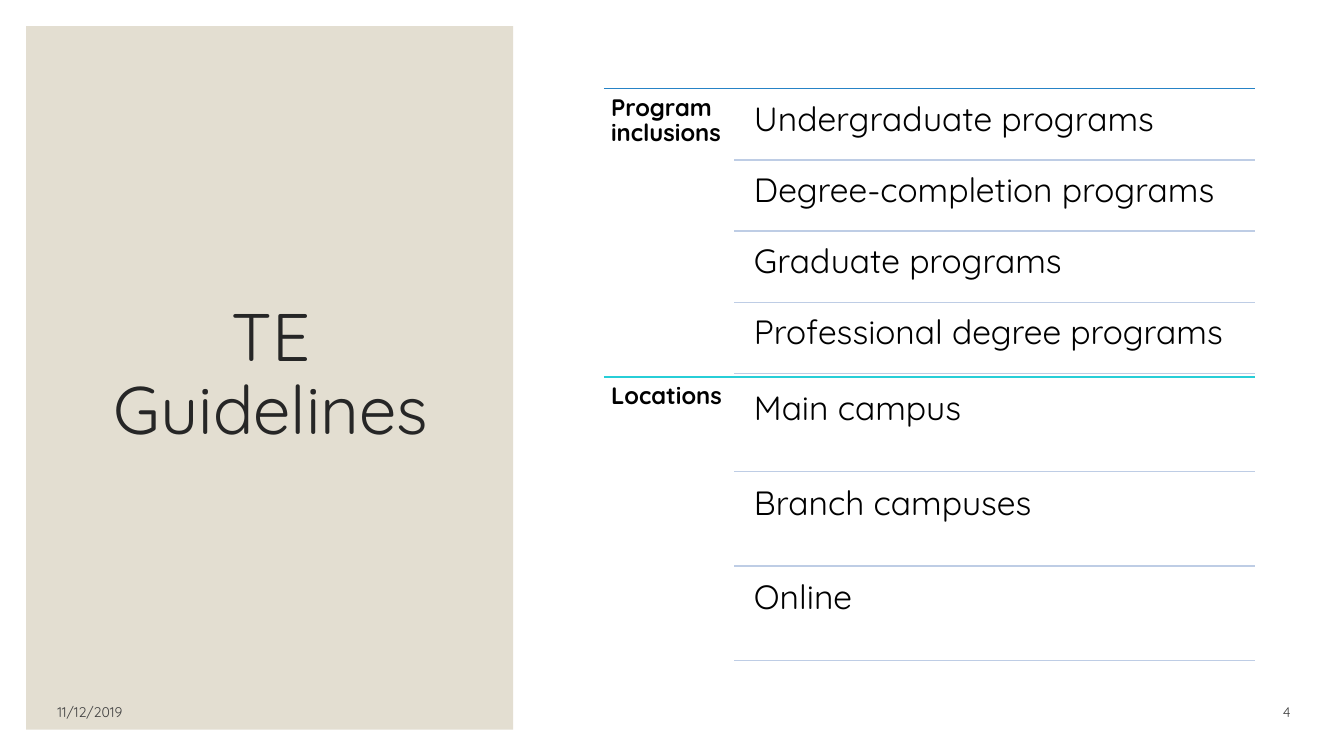
from dataclasses import dataclass

from lxml import etree
from pptx import Presentation
from pptx.dml.color import RGBColor
from pptx.enum import shapes, text
from pptx.oxml import ns
from pptx.util import Inches, Pt

FONT = "Quicksand"
COLORS = {
    "background": "FFFFFF", "panel": "E3DED1", "title": "262626",
    "footer": "404040", "body": "000000", "divider": "BECDE5",
    "programs": "2683C6", "locations": "27CED7",
}
LEFT, DIVIDER_LEFT, ITEM_LEFT, RIGHT = 5.99, 7.28, 7.38, 12.45
TOP, SECTION_HEIGHT = 0.88, 2.86
GAP_RATIO = 0.05  # gap before each item, as a share of item height


@dataclass
class Section:
    heading: str
    color: str
    items: list[str]


@dataclass
class Style:
    size: float
    color: str = "body"
    bold: bool = False
    align: text.PP_ALIGN = text.PP_ALIGN.LEFT
    anchor: text.MSO_ANCHOR = text.MSO_ANCHOR.TOP
    spacing: float = 0.9


SECTIONS = [
    Section("Program inclusions", "programs", [
        "Undergraduate programs", "Degree-completion programs",
        "Graduate programs", "Professional degree programs"]),
    Section("Locations", "locations", ["Main campus", "Branch campuses", "Online"]),
]
TITLE = Style(48, "title", align=text.PP_ALIGN.CENTER, anchor=text.MSO_ANCHOR.MIDDLE)
HEADING = Style(17, bold=True)
ITEM = Style(24)
DATE = Style(10, "footer", anchor=text.MSO_ANCHOR.BOTTOM, spacing=1)
NUMBER = Style(10, "footer", align=text.PP_ALIGN.RIGHT,
               anchor=text.MSO_ANCHOR.BOTTOM, spacing=1)


def rgb(name: str) -> RGBColor:
    return RGBColor.from_string(COLORS[name])


def write(sp, words: str, style: Style, inset: float = 0.1, inset_y: float = 0.05) -> None:
    tf = sp.text_frame
    tf.word_wrap = True
    tf.auto_size = text.MSO_AUTO_SIZE.NONE
    tf.vertical_anchor = style.anchor
    tf.margin_left = tf.margin_right = Inches(inset)
    tf.margin_top = tf.margin_bottom = Inches(inset_y)
    p = tf.paragraphs[0]
    p.text = words
    p.alignment = style.align
    p.line_spacing = style.spacing
    p.font.name = FONT
    p.font.size = Pt(style.size)
    p.font.bold = style.bold
    p.font.color.rgb = rgb(style.color)


def add_text(s, words: str, box: tuple, style: Style,
             inset: float = 0.1, inset_y: float = 0.05) -> None:
    write(s.shapes.add_textbox(*map(Inches, box)), words, style, inset, inset_y)


def add_rule(s, left: float, y: float, color: str) -> None:
    line = s.shapes.add_connector(shapes.MSO_CONNECTOR.STRAIGHT,
                                  *map(Inches, (left, y, RIGHT, y)))
    line.line.color.rgb = rgb(color)
    line.line.width = Pt(1)
    etree.SubElement(line._element.spPr, ns.qn("a:effectLst"))


def add_section(s, section: Section, top: float) -> None:
    add_rule(s, LEFT, top, section.color)
    add_text(s, section.heading, (LEFT, top, DIVIDER_LEFT - LEFT, SECTION_HEIGHT),
             HEADING, 0.07, 0.07)
    count = len(section.items)
    height = SECTION_HEIGHT / (count + (count + 1) * GAP_RATIO)
    gap = height * GAP_RATIO
    for i, item in enumerate(section.items):
        y = top + gap + i * (height + gap)
        add_text(s, item, (ITEM_LEFT, y, RIGHT - ITEM_LEFT, height), ITEM, 0.1, 0.1)
        add_rule(s, DIVIDER_LEFT, y + height, "divider")


def add_title_panel(s) -> None:
    panel = s.shapes.add_shape(shapes.MSO_SHAPE.RECTANGLE,
                               *map(Inches, (0.26, 0.26, 4.83, 6.98)))
    panel.shadow.inherit = False
    panel.fill.solid()
    panel.fill.fore_color.rgb = rgb("panel")
    panel.line.fill.background()
    title = s.shapes.title
    title.left, title.top, title.width, title.height = map(Inches, (0.63, 0.61, 4.12, 6.24))
    write(title, "TE Guidelines", TITLE)
    panel._element.addnext(title._element)  # keeps the title in front of the panel


def main() -> None:
    prs = Presentation()
    prs.slide_width, prs.slide_height = Inches(13.33), Inches(7.5)
    s = prs.slides.add_slide(prs.slide_layouts.get_by_name("Title Only"))
    s.background.fill.solid()
    s.background.fill.fore_color.rgb = rgb("background")
    add_title_panel(s)
    add_text(s, "11/12/2019", (0.47, 6.9, 3, 0.3), DATE)
    add_text(s, "4", (12, 6.9, 0.9, 0.3), NUMBER)
    for i, section in enumerate(SECTIONS):
        add_section(s, section, TOP + i * SECTION_HEIGHT)
    prs.save("out.pptx")


if __name__ == "__main__":
    main()
